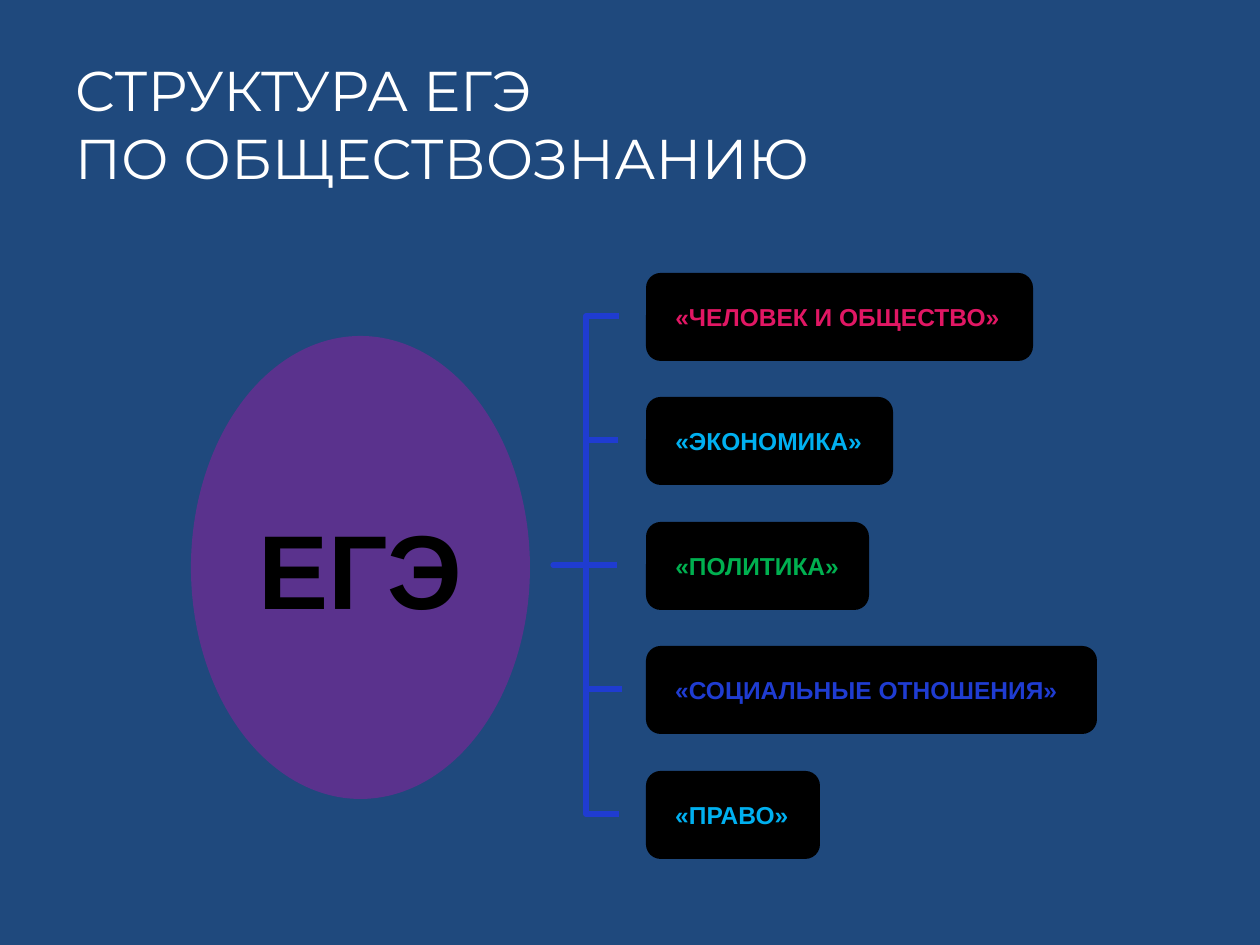
from pptx import Presentation
from pptx.dml.color import RGBColor
from pptx.enum.shapes import MSO_CONNECTOR as Connector, MSO_SHAPE as Shape
from pptx.enum.text import MSO_ANCHOR as Anchor, MSO_AUTO_SIZE as AutoSize, PP_ALIGN as Align
from pptx.oxml.ns import qn
from pptx.util import Emu, Pt
from lxml.etree import SubElement

NAVY = RGBColor(0x1F, 0x49, 0x7D)
PURPLE = RGBColor(0x5A, 0x32, 0x8D)
BLACK = RGBColor(0x00, 0x00, 0x00)
WHITE = RGBColor(0xFF, 0xFF, 0xFF)
PINK = RGBColor(0xE1, 0x17, 0x64)
SKY = RGBColor(0x00, 0xB0, 0xF0)
GREEN = RGBColor(0x00, 0xB0, 0x50)
BLUE = RGBColor(0x1F, 0x3C, 0xD1)

TOPICS = [
    ("«ЧЕЛОВЕК И ОБЩЕСТВО»", 387, PINK),
    ("«ЭКОНОМИКА»", 247, SKY),
    ("«ПОЛИТИКА»", 223, GREEN),
    ("«СОЦИАЛЬНЫЕ ОТНОШЕНИЯ»", 451, BLUE),
    ("«ПРАВО»", 174, SKY),
]
BRANCH_LEFTS = {1: 583, 2: 582, 3: 587}


def px(length):
    """Turn pixels into EMU at 126 pixels to the inch."""
    return Emu(round(length * 914400 / 126))


def row_offset(row):
    """Return the distance of a topic row from the first one."""
    return row * 249 // 2


class Deck:
    """Holds the style and the current slide."""

    heading_font = "Montserrat"
    body_font = "Arial"
    line_width = Pt(3)

    def __init__(self, width, height, background):
        """Start a presentation with one blank slide."""
        self.presentation = Presentation()
        self.presentation.slide_width = px(width)
        self.presentation.slide_height = px(height)
        self.slide = self.presentation.slides.add_slide(self.presentation.slide_layouts[6])
        fill = self.slide.background.fill
        fill.solid()
        fill.fore_color.rgb = background

    def set_text(self, shape, text, color, margins, align, frame_format, font_format):
        """Put formatted text into a shape."""
        frame = shape.text_frame
        side, end = map(px, margins)
        frame_format = {
            "word_wrap": True, "margin_left": side, "margin_right": side,
            "margin_top": end, "margin_bottom": end, **frame_format,
        }
        for name, value in frame_format.items():
            setattr(frame, name, value)
        paragraph = frame.paragraphs[0]
        paragraph.text = text
        paragraph.alignment = align
        for run in paragraph.runs:
            for name, value in font_format.items():
                setattr(run.font, name, value)
            run.font.color.rgb = color

    def title(self, box, text, size, color):
        """Add the heading."""
        shape = self.slide.shapes.add_textbox(*map(px, box))
        self.set_text(shape, text, color, (0, 6), Align.LEFT,
                      {"auto_size": AutoSize.SHAPE_TO_FIT_TEXT},
                      {"name": self.heading_font, "size": Pt(size)})

    def block(self, kind, box, fill, text, size, color, margins=(0, 0), align=Align.LEFT):
        """Add a filled shape with a bold label."""
        shape = self.slide.shapes.add_shape(kind, *map(px, box))
        shape.shadow.inherit = False
        shape.fill.solid()
        shape.fill.fore_color.rgb = fill
        shape.line.fill.background()
        self.set_text(shape, text, color, margins, align,
                      {"vertical_anchor": Anchor.MIDDLE},
                      {"name": self.body_font, "size": Pt(size), "bold": True})

    def stroke(self, shape, color):
        """Set the outline of a shape or connector."""
        shape.line.color.rgb = color
        shape.line.width = self.line_width

    def brace(self, box, color):
        """Add a square brace that points left."""
        shape = self.slide.shapes.add_shape(Shape.RIGHT_BRACE, *map(px, box))
        shape.shadow.inherit = False
        shape.rotation = 180
        shape.adjustments[0] = 0
        shape.adjustments[1] = 0.5
        shape.fill.background()
        self.stroke(shape, color)

    def branch(self, left, top, length, color):
        """Add a horizontal line."""
        line = self.slide.shapes.add_connector(
            Connector.STRAIGHT, *map(px, (left, top, left + length, top)))
        self.stroke(line, color)
        SubElement(line._element.spPr, qn("a:effectLst"))


def main():
    """Build and save the slide."""
    deck = Deck(1260, 945, NAVY)
    deck.title((75, 50, 1111, 149), "СТРУКТУРА ЕГЭ \vПО ОБЩЕСТВОЗНАНИЮ", 32, WHITE)
    deck.block(Shape.OVAL, (191, 336, 339, 463), PURPLE, "ЕГЭ", 60, BLACK, align=Align.CENTER)
    for row, (topic, width, color) in enumerate(TOPICS):
        box = (646, 273 + row_offset(row), width, 88)
        deck.block(Shape.ROUNDED_RECTANGLE, box, BLACK, topic, 14, color, margins=(25, 5))
    deck.brace((553, 316, 66, 498), BLUE)
    for row, left in BRANCH_LEFTS.items():
        deck.branch(left, 316 + row_offset(row), 35, BLUE)
    deck.presentation.save("out.pptx")


if __name__ == "__main__":
    main()
